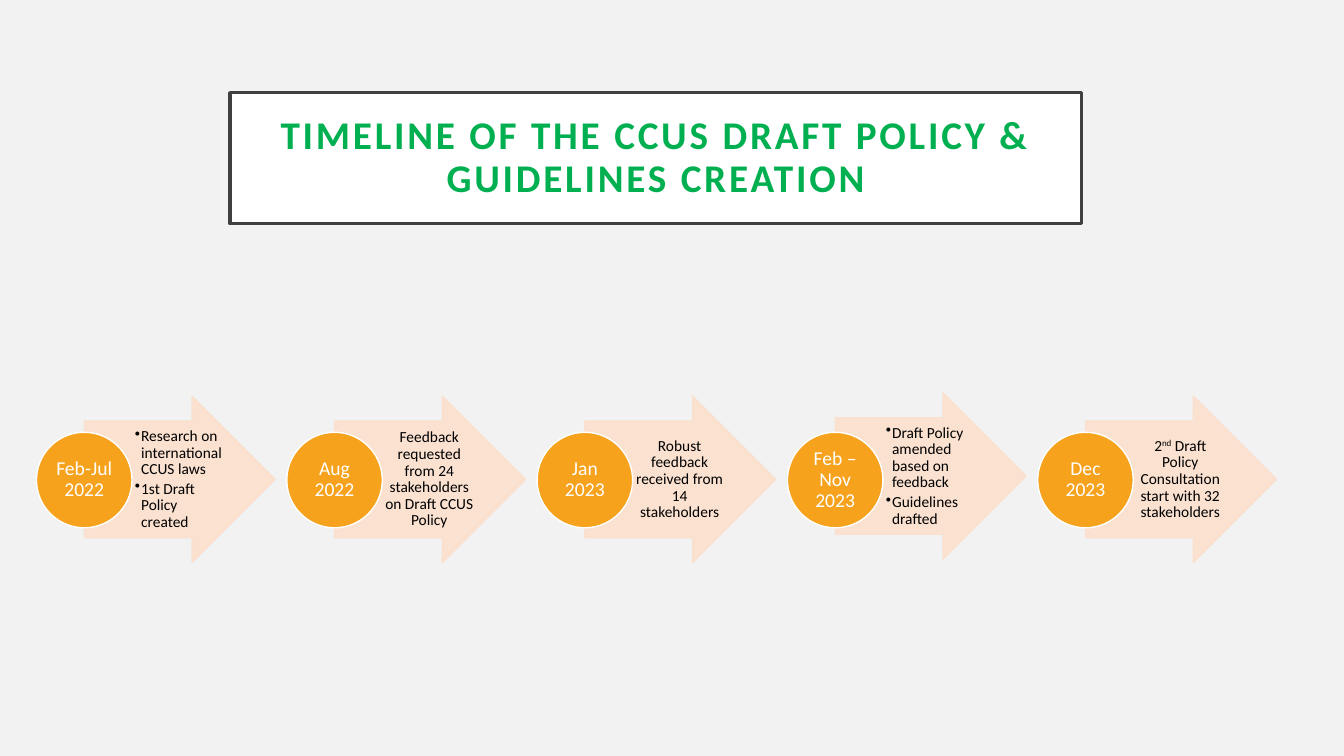
from dataclasses import dataclass

from lxml import etree
from pptx import Presentation
from pptx.dml.color import RGBColor
from pptx.enum import shapes, text
from pptx.oxml import ns
from pptx.util import Pt


@dataclass(frozen=True)
class Theme:
    font: str = "Calibri"
    background: str = "F2F2F2"
    panel: str = "FFFFFF"
    border: str = "404040"
    heading: str = "00B050"
    arrow: str = "FBE0CD"
    circle: str = "F6A21D"
    light: str = "FFFFFF"
    dark: str = "000000"
    title_size: int = 28
    date_size: int = 14
    detail_size: int = 11


# Date, paragraphs (^ marks superscript), vertical shift of the arrow
STEPS = [
    ("Feb-Jul 2022", ["Research on international CCUS laws", "1st Draft Policy created"], 0),
    ("Aug 2022", ["Feedback requested from 24 stakeholders on Draft CCUS Policy"], 0),
    ("Jan 2023", ["Robust feedback received from 14 stakeholders"], 0),
    ("Feb – Nov 2023", ["Draft Policy amended based on feedback", "Guidelines drafted"], -2.4),
    ("Dec 2023", ["2^nd^ Draft Policy Consultation start with 32 stakeholders"], 0),
]
FIRST_LEFT, STEP_PITCH = 26.1, 178.8
CIRCLE_TOP, CIRCLE_SIZE = 308.8, 68.2
DATE_INSET = 10
ARROW_TOP, ARROW_WIDTH, ARROW_HEIGHT = 283, 136.4, 118.8
DETAIL_WIDTH, DETAIL_HEIGHT = 66.4, 83.2


def write(frame, paragraphs, *, size, color, font, bold=False, tracking=None,
          bulleted=False, insets=(0, 0, 0, 0)):
    """Fill a text frame; pieces between ^ marks become superscript."""
    frame.word_wrap = True
    frame.auto_size = text.MSO_AUTO_SIZE.NONE
    frame.vertical_anchor = text.MSO_ANCHOR.MIDDLE
    frame.margin_left, frame.margin_top, frame.margin_right, frame.margin_bottom = map(Pt, insets)
    for index, content in enumerate(paragraphs):
        paragraph = frame.add_paragraph() if index else frame.paragraphs[0]
        paragraph.line_spacing = 0.9
        if index:
            paragraph.space_before = Pt(2)
        if bulleted:
            paragraph.level = 1
            paragraph.alignment = text.PP_ALIGN.LEFT
            properties = paragraph._p.get_or_add_pPr()
            properties.set("marL", str(Pt(4.5)))
            properties.set("indent", str(-Pt(4.5)))
            etree.SubElement(properties, ns.qn("a:buChar")).set("char", "•")
        else:
            paragraph.alignment = text.PP_ALIGN.CENTER
        for position, piece in enumerate(content.split("^")):
            run = paragraph.add_run()
            run.text = piece
            run.font.name, run.font.size, run.font.bold = font, Pt(size), bold
            run.font.color.rgb = RGBColor.from_string(color)
            if position % 2:
                run._r.get_or_add_rPr().set("baseline", "30000")
            if tracking:
                run._r.get_or_add_rPr().set("spc", str(tracking * 100))


class TimelineSlide:
    def __init__(self, deck, theme):
        self.theme = theme
        self.slide = deck.slides.add_slide(deck.slide_layouts[5])
        self.slide.background.fill.solid()
        self.slide.background.fill.fore_color.rgb = RGBColor.from_string(theme.background)
        self.group = None

    def paint(self, shape, fill, line, width, opacity=None):
        shape.fill.solid()
        shape.fill.fore_color.rgb = RGBColor.from_string(fill)
        shape.line.color.rgb = RGBColor.from_string(line)
        shape.line.width = Pt(width)
        if opacity:
            for color in shape._element.spPr.iter(ns.qn("a:srgbClr")):
                etree.SubElement(color, ns.qn("a:alpha")).set("val", str(opacity * 1000))

    def title(self, content, left, top, width, height):
        title = self.slide.shapes.title
        title.left, title.top, title.width, title.height = map(Pt, (left, top, width, height))
        self.paint(title, self.theme.panel, self.theme.border, 2.5)
        write(title.text_frame, [content], size=self.theme.title_size,
              color=self.theme.heading, font=self.theme.font, bold=True,
              tracking=2, insets=(14.4,) * 4)

    def start_group(self):
        self.group = self.slide.shapes.add_group_shape()

    def preset(self, kind, box, fill, line, opacity=None):
        shape = self.group.shapes.add_shape(kind, *map(Pt, box))
        shape.shadow.inherit = False
        self.paint(shape, fill, line, 1, opacity)
        return shape

    def label(self, paragraphs, box, **style):
        label = self.group.shapes.add_textbox(*map(Pt, box))
        write(label.text_frame, paragraphs, font=self.theme.font, **style)

    def step(self, left, date, details, shift):
        theme = self.theme
        arrow_top = ARROW_TOP + shift
        arrow = self.preset(
            shapes.MSO_SHAPE.RIGHT_ARROW,
            (left + CIRCLE_SIZE / 2, arrow_top, ARROW_WIDTH, ARROW_HEIGHT),
            theme.arrow, theme.arrow, opacity=90)
        arrow.adjustments[0], arrow.adjustments[1] = 0.7, 0.5
        self.label(
            details,
            (left + CIRCLE_SIZE, arrow_top + (ARROW_HEIGHT - DETAIL_HEIGHT) / 2,
             DETAIL_WIDTH, DETAIL_HEIGHT),
            size=theme.detail_size, color=theme.dark,
            bulleted=len(details) > 1, insets=(2, 0.6, 1.2, 0.6))
        self.preset(shapes.MSO_SHAPE.OVAL, (left, CIRCLE_TOP, CIRCLE_SIZE, CIRCLE_SIZE),
                    theme.circle, theme.light)
        date_size = CIRCLE_SIZE - 2 * DATE_INSET
        self.label([date], (left + DATE_INSET, CIRCLE_TOP + DATE_INSET, date_size, date_size),
                   size=theme.date_size, color=theme.light, insets=(0.7,) * 4)


def main():
    deck = Presentation()
    deck.slide_width, deck.slide_height = Pt(960), Pt(540)
    timeline = TimelineSlide(deck, Theme())
    timeline.title("TIMELINE OF THE CCUS DRAFT POLICY & GUIDELINES CREATION",
                   164.2, 66.2, 608.4, 93.6)
    timeline.start_group()
    for index, (date, details, shift) in enumerate(STEPS):
        timeline.step(FIRST_LEFT + index * STEP_PITCH, date, details, shift)
    deck.save("out.pptx")


if __name__ == "__main__":
    main()
